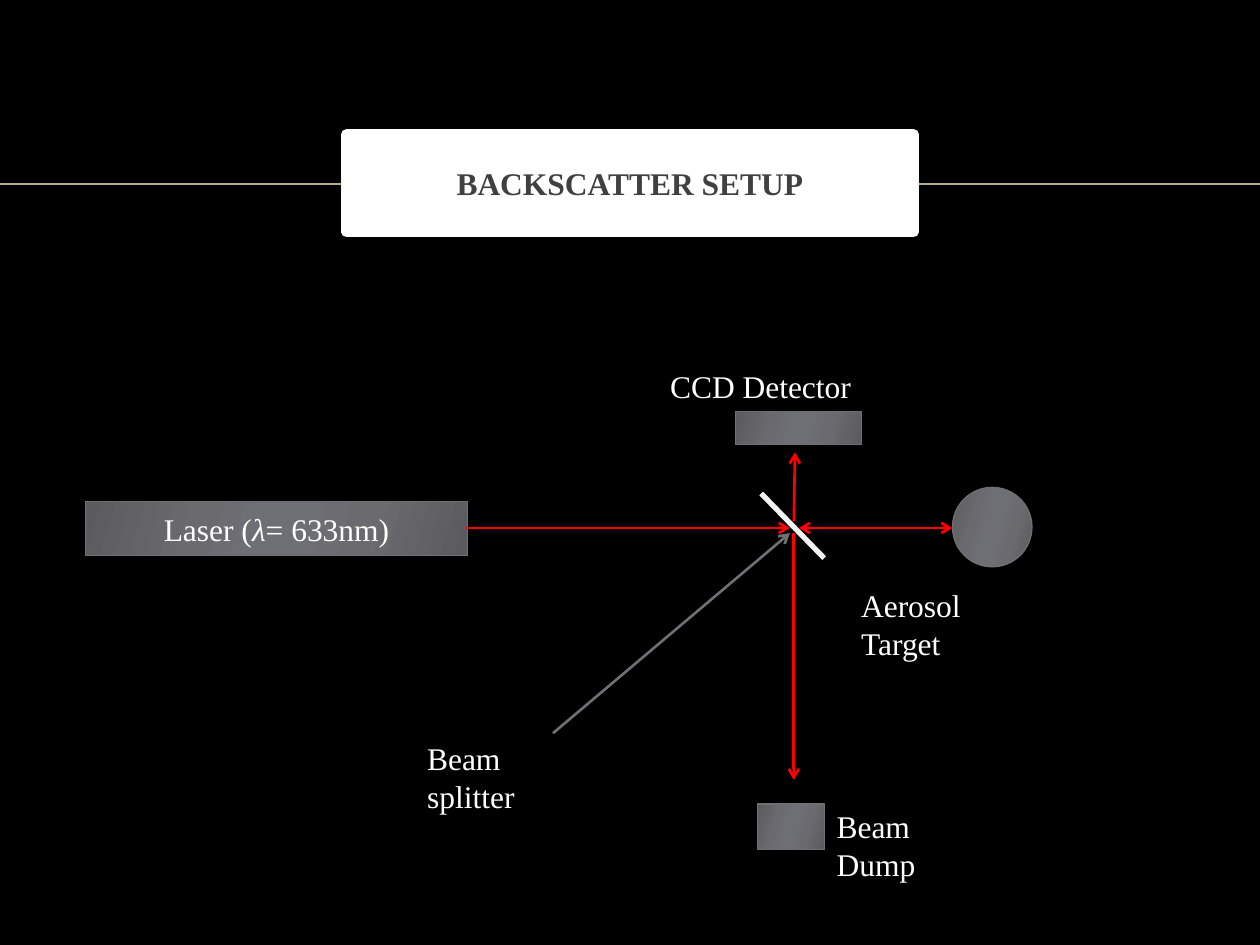
"""Build the backscatter setup slide: a laser, beam splitter, detector, target and dump."""
from dataclasses import dataclass

from lxml.etree import SubElement
from pptx import Presentation
from pptx.dml.color import RGBColor
from pptx.enum.shapes import MSO_CONNECTOR, MSO_SHAPE
from pptx.enum.text import MSO_ANCHOR, MSO_AUTO_SIZE, PP_ALIGN
from pptx.oxml.ns import qn
from pptx.slide import Slide
from pptx.util import Pt


@dataclass(frozen=True)
class Theme:
    background: str = "000000"
    panel: str = "FFFFFF"
    heading: str = "404040"
    text: str = "FFFFFF"
    rule: str = "BBAA8A"
    beam: str = "FF0000"
    mirror: str = "F2F2F2"
    metal: str = "6F6F74"
    sheen: tuple = ((0, "5B5B5F"), (30, "6A6A6F"), (45, "6E6E75"),
                    (55, "6E6E75"), (73, "6A6A6F"), (100, "5B5B5F"))
    sheen_angle: float = 344
    font: str = "Times New Roman"
    size: float = 18


@dataclass(frozen=True)
class Box:
    left: float
    top: float
    width: float
    height: float

    def lengths(self) -> tuple:
        return tuple(Pt(n) for n in (self.left, self.top, self.width, self.height))


@dataclass(frozen=True)
class Device:
    box: Box
    outline: MSO_SHAPE = MSO_SHAPE.RECTANGLE
    words: tuple = ()


@dataclass(frozen=True)
class Ray:
    start: tuple
    end: tuple
    color: str
    width: float = 1.5
    arrows: tuple = ("tailEnd",)


@dataclass(frozen=True)
class Label:
    words: str
    box: Box


THEME = Theme()
AXIS_X, AXIS_Y = 453.6, 301.7
LABEL_HEIGHT = 29

DEVICES = (
    Device(Box(49, 286.6, 218, 31),
           words=(("Laser (", False), ("λ", True), ("= 633nm)", False))),
    Device(Box(420.5, 235.3, 72, 18.7)),
    Device(Box(544.3, 278.5, 45.4, 45.4), MSO_SHAPE.OVAL),
    Device(Box(432.7, 459.4, 38.3, 26)),
)
RAYS = (
    Ray((266.4, AXIS_Y), (451.4, AXIS_Y), THEME.beam),
    Ray((435, 282), (471, 319), THEME.mirror, 3, ()),
    Ray((AXIS_X, 298), (454.3, 258.5), THEME.beam),
    Ray((456.5, AXIS_Y), (544.3, AXIS_Y), THEME.beam, arrows=("headEnd", "tailEnd")),
    Ray((AXIS_X, 304.6), (AXIS_X, 445.7), THEME.beam),
    Ray((316, 419), (451.4, 304.6), THEME.metal),
)
LABELS = (
    Label("CCD Detector", Box(375.8, 206, 118.8, LABEL_HEIGHT)),
    Label("Aerosol Target", Box(485, 331.2, 119.5, LABEL_HEIGHT)),
    Label("Beam splitter", Box(237, 419, 108, LABEL_HEIGHT)),
    Label("Beam Dump", Box(471, 457.5, 105, LABEL_HEIGHT)),
)


def write(paragraph, words: str, color: str = THEME.text, **extra) -> None:
    """Add one run in the theme's type."""
    run = paragraph.add_run()
    run.text = words
    run.font.color.rgb = RGBColor.from_string(color)
    formats = {"name": THEME.font, "size": Pt(THEME.size), **extra}
    for attribute, value in formats.items():
        setattr(run.font, attribute, value)


def draw_ray(slide: Slide, ray: Ray) -> None:
    """Draw a straight line with its arrowheads."""
    ends = [Pt(n) for n in (*ray.start, *ray.end)]
    line = slide.shapes.add_connector(MSO_CONNECTOR.STRAIGHT, *ends)
    line.line.color.rgb = RGBColor.from_string(ray.color)
    line.line.width = Pt(ray.width)
    properties = line._element.spPr
    for arrow in ray.arrows:
        SubElement(properties.find(qn("a:ln")), qn(f"a:{arrow}"), type="arrow")
    SubElement(properties, qn("a:effectLst"))


def add_sheen(shape) -> None:
    """Fill a shape with the metallic gradient."""
    shape.fill.gradient()
    shape.fill.gradient_angle = THEME.sheen_angle
    stops = shape._element.spPr.find(".//" + qn("a:gsLst"))
    for stop in list(stops):
        stops.remove(stop)
    for percent, color in THEME.sheen:
        stop = SubElement(stops, qn("a:gs"), pos=str(percent * 1000))
        SubElement(stop, qn("a:srgbClr"), val=color)


def add_outlined(slide: Slide, outline: MSO_SHAPE, box: Box, color: str, width: float):
    """Add a preset shape with a plain outline and centred text."""
    shape = slide.shapes.add_shape(outline, *box.lengths())
    shape.shadow.inherit = False
    shape.line.color.rgb = RGBColor.from_string(color)
    shape.line.width = Pt(width)
    shape.text_frame.vertical_anchor = MSO_ANCHOR.MIDDLE
    shape.text_frame.paragraphs[0].alignment = PP_ALIGN.CENTER
    return shape


def draw_device(slide: Slide, device: Device) -> None:
    """Draw a metallic instrument."""
    instrument = add_outlined(slide, device.outline, device.box, THEME.metal, 0.75)
    add_sheen(instrument)
    for words, italic in device.words:
        write(instrument.text_frame.paragraphs[0], words, italic=italic)


def draw_label(slide: Slide, label: Label) -> None:
    """Place a wrapped caption."""
    frame = slide.shapes.add_textbox(*label.box.lengths()).text_frame
    for attribute, value in {"word_wrap": True,
                             "auto_size": MSO_AUTO_SIZE.SHAPE_TO_FIT_TEXT}.items():
        setattr(frame, attribute, value)
    write(frame.paragraphs[0], label.words)


def draw_heading(slide: Slide) -> None:
    """Draw the title panel over its rule."""
    draw_ray(slide, Ray((0, 105), (720, 105), THEME.rule, 1, ()))
    panel = add_outlined(slide, MSO_SHAPE.RECTANGLE, Box(198, 77, 324, 55.5),
                         THEME.panel, 6)
    panel.fill.solid()
    panel.fill.fore_color.rgb = RGBColor.from_string(THEME.panel)
    title = panel.text_frame.paragraphs[0]
    title.space_before = Pt(4)
    write(title, "BACKSCATTER SETUP", THEME.heading, bold=True)


def main() -> None:
    """Build and save the slide."""
    deck = Presentation()
    deck.slide_width, deck.slide_height = Pt(720), Pt(540)
    slide = deck.slides.add_slide(deck.slide_layouts[6])
    slide.background.fill.solid()
    slide.background.fill.fore_color.rgb = RGBColor.from_string(THEME.background)
    draw_heading(slide)
    for draw, items in ((draw_device, DEVICES), (draw_ray, RAYS), (draw_label, LABELS)):
        for item in items:
            draw(slide, item)
    deck.save("out.pptx")


if __name__ == "__main__":
    main()
